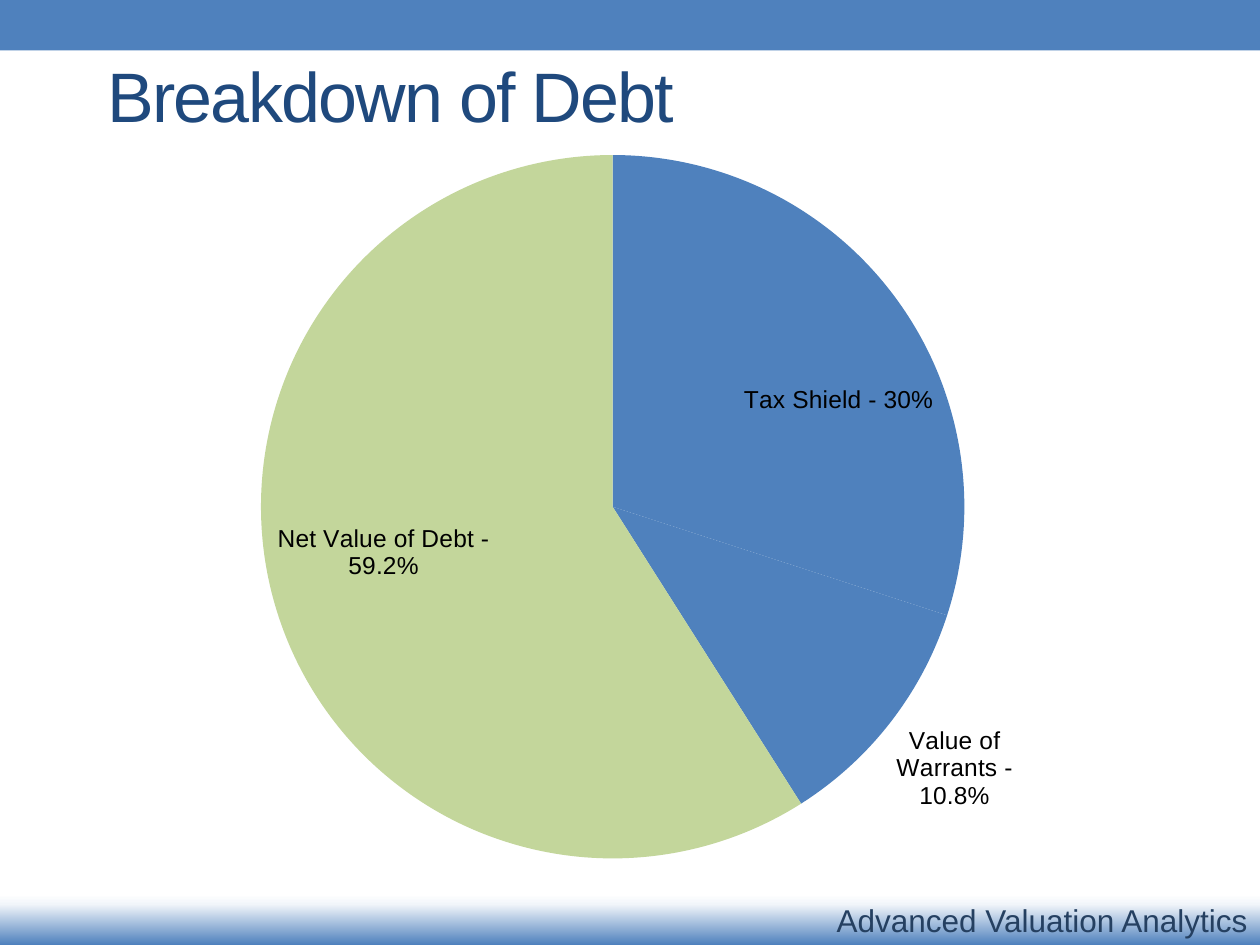
"""Build the Breakdown of Debt slide with a pie chart between two bars."""
from copy import deepcopy
from dataclasses import dataclass

from lxml.etree import SubElement
from pptx import Presentation
from pptx.chart.data import CategoryChartData
from pptx.dml.color import RGBColor
from pptx.enum.chart import XL_CHART_TYPE as ChartType, XL_LABEL_POSITION as LabelPosition
from pptx.enum.shapes import MSO_SHAPE as ShapeType
from pptx.enum.text import MSO_ANCHOR as Anchor, MSO_AUTO_SIZE as AutoSize, PP_ALIGN as Align
from pptx.oxml.ns import qn
from pptx.util import Cm, Pt

FONT = "Arial"
BLUE = RGBColor(0x4F, 0x81, 0xBD)
GREEN = RGBColor(0xC3, 0xD6, 0x9B)
PALE_BLUE = RGBColor(0xF1, 0xF5, 0xFA)
WHITE = RGBColor(0xFF, 0xFF, 0xFF)
BLACK = RGBColor(0, 0, 0)
TITLE_BLUE = RGBColor(0x1F, 0x49, 0x7D)
FOOTER_BLUE = RGBColor(0x25, 0x40, 0x61)
SLIDE_WIDTH, SLIDE_HEIGHT, BAR_HEIGHT = Cm(25.4), Cm(19.05), Cm(1.02)


@dataclass
class Slice:
    """A labelled share of the debt."""
    label: str
    share: int
    color: RGBColor


SLICES = [
    Slice("Tax Shield - 30%", 30, BLUE),
    Slice("Value of Warrants - 10.8%", 11, BLUE),
    Slice("Net Value of Debt - 59.2%", 59, GREEN),
]
FOOTER_STOPS = [(0, BLUE), (0.8, PALE_BLUE), (1, WHITE)]
PLOT_LAYOUT = {
    "layoutTarget": "inner", "xMode": "edge", "yMode": "edge",
    "x": "0.1", "y": "0.01", "w": "0.81", "h": "0.97",
}


def style_font(font, size: float, color: RGBColor) -> None:
    """Apply the slide typeface with a size and colour."""
    font.name, font.size = FONT, Pt(size)
    font.color.rgb = color


def add_bar(slide, top: int):
    """Add a full-width blue bar."""
    bar = slide.shapes.add_shape(ShapeType.RECTANGLE, 0, top, SLIDE_WIDTH, BAR_HEIGHT)
    bar.shadow.inherit = False
    bar.fill.solid()
    bar.fill.fore_color.rgb = BLUE
    bar.line.fill.background()
    return bar


def add_footer(slide, text: str) -> None:
    """Add the bottom bar, fading upwards to white, with its text."""
    bar = add_bar(slide, SLIDE_HEIGHT - BAR_HEIGHT)
    bar.fill.gradient()
    bar.fill.gradient_angle = 90
    stop_list = next(bar._element.iter(qn("a:gsLst")))
    stop_list.append(deepcopy(stop_list[-1]))
    for stop, (position, color) in zip(bar.fill.gradient_stops, FOOTER_STOPS):
        stop.position = position
        stop.color.rgb = color
    frame = bar.text_frame
    frame.text = text
    frame.vertical_anchor = Anchor.MIDDLE
    paragraph = frame.paragraphs[0]
    paragraph.alignment = Align.RIGHT
    style_font(paragraph.runs[0].font, 18, FOOTER_BLUE)


def set_title(slide, text: str) -> None:
    """Place and format the title placeholder."""
    title = slide.shapes.title
    title.left, title.top, title.width, title.height = Cm(1.91), Cm(0.85), Cm(21.59), Cm(2.11)
    frame = title.text_frame
    frame.text = text
    frame.auto_size = AutoSize.NONE
    frame.vertical_anchor = Anchor.MIDDLE
    paragraph = frame.paragraphs[0]
    paragraph.alignment = Align.LEFT
    run = paragraph.runs[0]
    style_font(run.font, 40, TITLE_BLUE)
    run._r.get_or_add_rPr().set("spc", "-100")


def set_plot_layout(chart) -> None:
    """Fix the inner plot area within the chart."""
    plot_area = next(chart._chartSpace.iter(qn("c:plotArea")))
    for layout in plot_area.findall(qn("c:layout")):
        plot_area.remove(layout)
    layout = SubElement(plot_area, qn("c:layout"))
    plot_area.insert(0, layout)
    manual = SubElement(layout, qn("c:manualLayout"))
    for name, value in PLOT_LAYOUT.items():
        SubElement(manual, qn(f"c:{name}")).set("val", value)


def add_pie(slide, slices: list[Slice]) -> None:
    """Add the pie chart with category labels."""
    data = CategoryChartData()
    data.categories = [part.label for part in slices]
    data.add_series("Series 1", [part.share for part in slices])
    chart = slide.shapes.add_chart(
        ChartType.PIE, Cm(2.54), Cm(2.98), Cm(19.43), Cm(14.62), data
    ).chart
    chart.has_title = chart.has_legend = False
    style_font(chart.font, 12, BLACK)
    plot = chart.plots[0]
    plot.vary_by_categories = True
    for index, part in enumerate(slices):
        fill = plot.series[0].points[index].format.fill
        fill.solid()
        fill.fore_color.rgb = part.color
    labels = plot.series[0].data_labels
    labels.show_category_name = True
    labels.show_value = labels.show_percentage = False
    labels.position = LabelPosition.BEST_FIT
    labels.number_format, labels.number_format_is_linked = "0.0%", False
    style_font(labels.font, 14, BLACK)
    set_plot_layout(chart)


def main() -> None:
    """Create and save the presentation."""
    presentation = Presentation()
    presentation.slide_width, presentation.slide_height = SLIDE_WIDTH, SLIDE_HEIGHT
    slide = presentation.slides.add_slide(presentation.slide_layouts[5])
    add_bar(slide, 0)
    add_footer(slide, "Advanced Valuation Analytics")
    set_title(slide, "Breakdown of Debt")
    add_pie(slide, SLICES)
    presentation.save("out.pptx")


if __name__ == "__main__":
    main()
